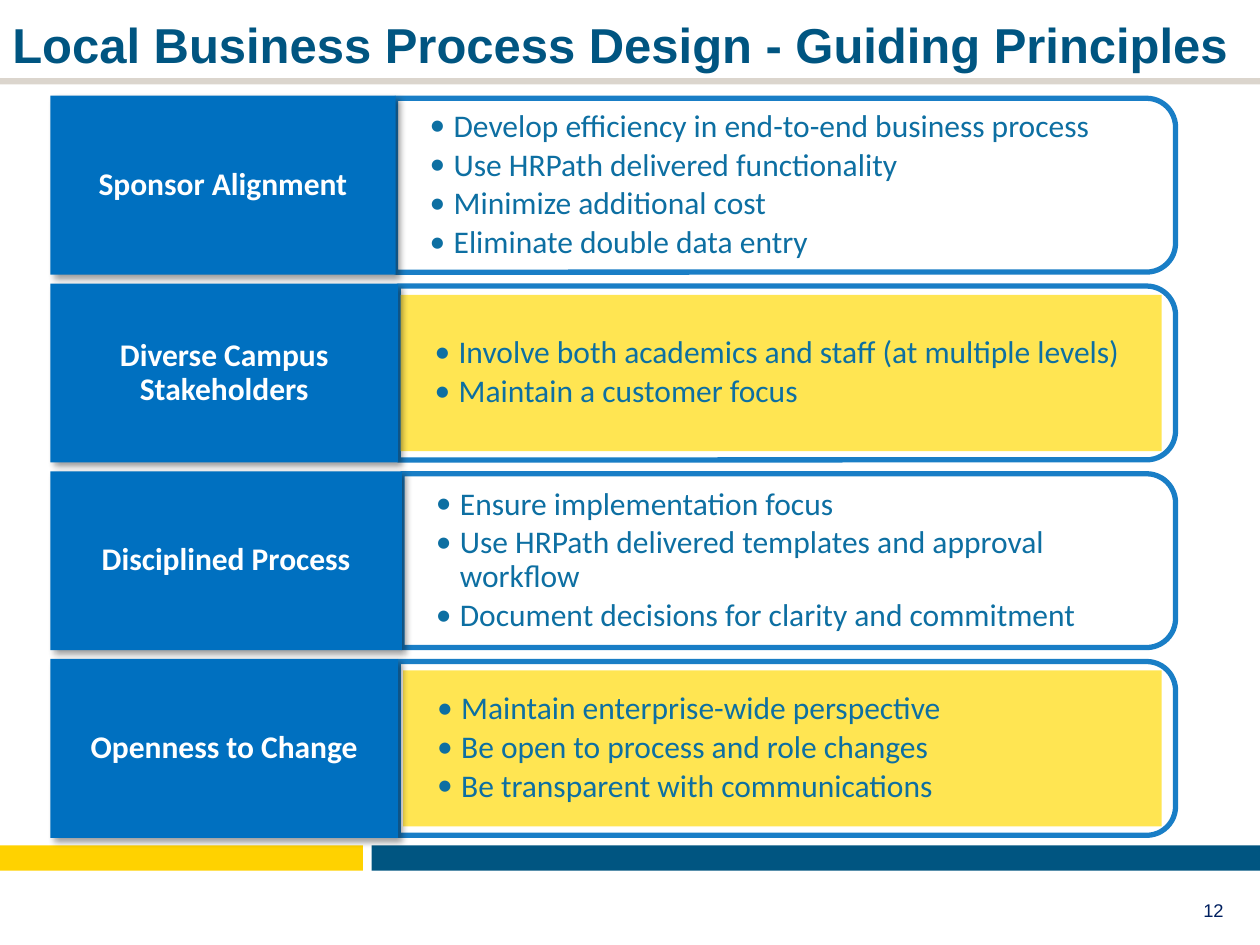
from dataclasses import dataclass

from lxml import etree
from pptx import Presentation
from pptx.dml.color import RGBColor
from pptx.enum.shapes import MSO_SHAPE
from pptx.enum.text import MSO_ANCHOR, PP_ALIGN
from pptx.oxml.ns import qn
from pptx.util import Inches, Pt

RECT = MSO_SHAPE.RECTANGLE
ROUND = MSO_SHAPE.ROUND_2_SAME_RECTANGLE
TOP, MID = MSO_ANCHOR.TOP, MSO_ANCHOR.MIDDLE
LEFT, CENTER, RIGHT = PP_ALIGN.LEFT, PP_ALIGN.CENTER, PP_ALIGN.RIGHT


@dataclass(frozen=True)
class Theme:
    navy: str = "005581"
    blue: str = "0070C0"
    teal: str = "0D6FA2"
    gold: str = "FFD200"
    pale: str = "FFE552"
    gray: str = "DBD5CD"
    ink: str = "002060"
    white: str = "FFFFFF"
    black: str = "000000"
    head: str = "Arial"
    body: str = "Calibri"
    title: float = 28
    text: float = 18
    page: float = 10.5


THEME = Theme()

# Grid of the rows
ROW_TOP, STEP, ROW_H = 0.76, 1.49, 1.42
TAB_X, EDGE, FRAME_H = 0.4, 9.33, 1.38
BODY_H = 1.24

# Label, tab width, body left, body width, body fill, bullets
ROWS = [
    ("Sponsor Alignment", 2.74, 3.14, 6.12, None,
     ["Develop efficiency in end-to-end business process",
      "Use HRPath delivered functionality",
      "Minimize additional cost",
      "Eliminate double data entry"]),
    ("Diverse Campus Stakeholders", 2.76, 3.18, 6.04, THEME.pale,
     ["Involve both academics and staff (at multiple levels)",
      "Maintain a customer focus"]),
    ("Disciplined Process", 2.79, 3.19, 6.07, None,
     ["Ensure implementation focus",
      "Use HRPath delivered templates and approval workflow",
      "Document decisions for clarity and commitment"]),
    ("Openness to Change", 2.76, 3.2, 6.02, THEME.pale,
     ["Maintain enterprise-wide perspective",
      "Be open to process and role changes",
      "Be transparent with communications"]),
]


def add_tag(parent, tag, **attrs):
    node = etree.SubElement(parent, qn(tag))
    for key, value in attrs.items():
        node.set(key, str(value))
    return node


def add_bar(slide, x, y, w, h, color=None, kind=RECT):
    bar = slide.shapes.add_shape(kind, Inches(x), Inches(y), Inches(w), Inches(h))
    bar.shadow.inherit = False
    bar.line.fill.background()
    if color:
        bar.fill.solid()
        bar.fill.fore_color.rgb = RGBColor.from_string(color)
    else:
        bar.fill.background()
    return bar


def set_frame(shape, anchor, side=0.1, edge=0.05):
    frame = shape.text_frame
    frame.word_wrap = True
    frame.vertical_anchor = anchor
    frame.margin_left = frame.margin_right = Inches(side)
    frame.margin_top = frame.margin_bottom = Inches(edge)
    return frame


def style(para, size, face, color, bold=False, align=LEFT):
    para.alignment = align
    for run in para.runs:
        font = run.font
        font.size, font.name, font.bold = Pt(size), face, bold
        font.color.rgb = RGBColor.from_string(color)


def add_text(slide, x, y, w, h, text, size, face, color,
             bold=False, align=LEFT, anchor=TOP):
    box = slide.shapes.add_textbox(Inches(x), Inches(y), Inches(w), Inches(h))
    para = set_frame(box, anchor).paragraphs[0]
    para.text = text
    style(para, size, face, color, bold, align)


def add_frame(slide, x, mid):
    """Outline turned a quarter so that its round corners face right."""
    w = EDGE - x
    frame = add_bar(slide, x + (w - FRAME_H) / 2, mid - w / 2, FRAME_H, w, kind=ROUND)
    frame.rotation = 90
    frame.adjustments[0], frame.adjustments[1] = 0.167, 0
    frame.line.width = Pt(3)
    frame.line.color.rgb = RGBColor.from_string(THEME.blue)
    tint = frame._element.spPr.find(qn("a:ln")).find(".//" + qn("a:srgbClr"))
    add_tag(tint, "a:alpha", val=90000)


def add_list(slide, x, y, w, fill, items):
    body = add_bar(slide, x, y, w, BODY_H, fill)
    frame = set_frame(body, MID, 0.27, 0.14)
    for i, item in enumerate(items):
        para = frame.add_paragraph() if i else frame.paragraphs[0]
        para.text = item
        props = para._p.get_or_add_pPr()
        props.set("marL", str(Inches(0.19)))
        props.set("indent", str(Inches(-0.19)))
        add_tag(add_tag(props, "a:buClr"), "a:srgbClr", val=THEME.teal)
        add_tag(props, "a:buFont", typeface=THEME.body)
        add_tag(props, "a:buChar", char="•")
        para.level = 1
        para.line_spacing = 0.9
        para.space_before = Pt(2.7 if i else 0)
        style(para, THEME.text, THEME.body, THEME.teal)


def add_tab(slide, y, w, label):
    tab = add_bar(slide, TAB_X, y, w, ROW_H, THEME.blue)
    glow = add_tag(tab._element.spPr.find(qn("a:effectLst")), "a:outerShdw",
                   blurRad=Pt(4), dist=Pt(3), dir=45 * 60000,
                   algn="tl", rotWithShape=0)
    tint = add_tag(glow, "a:srgbClr", val=THEME.black)
    add_tag(tint, "a:alpha", val=40000)
    para = set_frame(tab, MID, 0.07, 0.04).paragraphs[0]
    para.text = label
    para.line_spacing = 0.9
    style(para, THEME.text, THEME.body, THEME.white, True, CENTER)


def main():
    t = THEME
    deck = Presentation()
    deck.slide_width, deck.slide_height = Inches(10), Inches(7.5)
    slide = deck.slides.add_slide(deck.slide_layouts[6])

    # Footer bars and title rule
    add_bar(slide, 2.95, 6.71, 7.05, 0.2, t.navy)
    add_bar(slide, 0, 6.71, 2.88, 0.2, t.gold)
    add_bar(slide, 0, 0.62, 10, 0.05, t.gray)

    # Title and page number
    add_text(slide, 0, 0.07, 9.93, 0.47,
             "Local Business Process Design - Guiding Principles",
             t.title, t.head, t.navy, True)
    add_text(slide, 7.56, 7.02, 2.25, 0.4, "12", t.page, t.head, t.ink,
             align=RIGHT, anchor=MID)

    # Principles
    for i, (label, wide, x, w, fill, items) in enumerate(ROWS):
        y = ROW_TOP + i * STEP
        add_frame(slide, TAB_X + wide, y + ROW_H / 2)
        add_list(slide, x, y + 0.09, w, fill, items)
        add_tab(slide, y, wide, label)

    deck.save("out.pptx")


if __name__ == "__main__":
    main()
